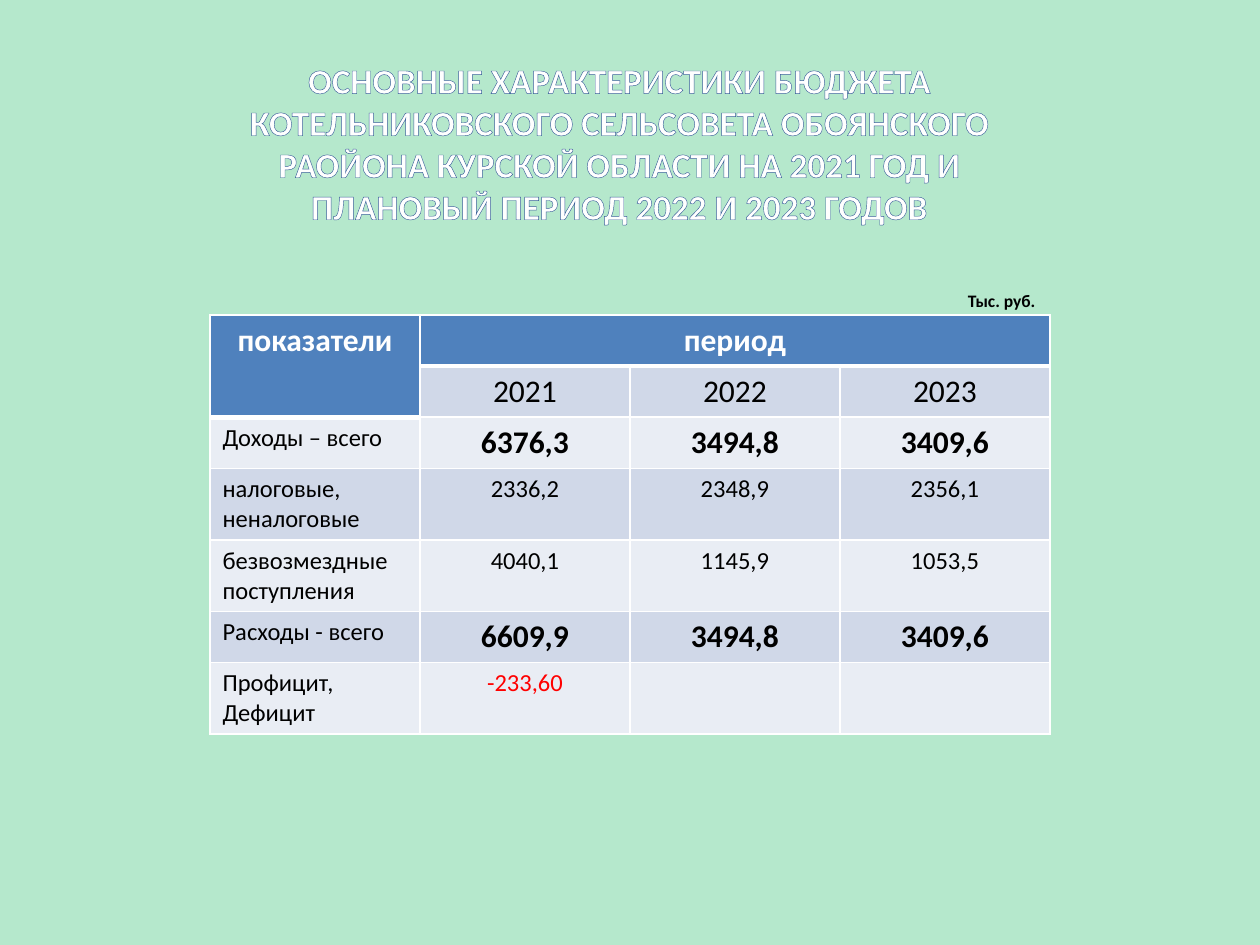
import pptx
import pptx.dml.color
import pptx.enum.text
import pptx.oxml
import pptx.oxml.ns
import pptx.util
from pptx.util import Pt

COLORS = {
    "background": "B5E8CC",
    "white": "FFFFFF",
    "black": "000000",
    "red": "FF0000",
    "outline": "3A5F9A",
    "header": "4F81BD",
    "dark band": "D0D8E8",
    "light band": "E9EDF4",
}
FONT = "Calibri"
CENTER = pptx.enum.text.PP_ALIGN.CENTER
LEFT = pptx.enum.text.PP_ALIGN.LEFT

TITLE = (
    "ОСНОВНЫЕ ХАРАКТЕРИСТИКИ БЮДЖЕТА КОТЕЛЬНИКОВСКОГО СЕЛЬСОВЕТА "
    "ОБОЯНСКОГО РАОЙОНА КУРСКОЙ ОБЛАСТИ НА 2021 ГОД И ПЛАНОВЫЙ ПЕРИОД "
    "2022 И 2023 ГОДОВ"
)
ROWS = [
    ["показатели", "период", "", ""],
    ["", "2021", "2022", "2023"],
    ["Доходы – всего", "6376,3", "3494,8", "3409,6"],
    ["налоговые, неналоговые", "2336,2", "2348,9", "2356,1"],
    ["безвозмездные поступления", "4040,1", "1145,9", "1053,5"],
    ["Расходы - всего", "6609,9", "3494,8", "3409,6"],
    ["Профицит,\nДефицит", "-233,60", "", ""],
]
TOTAL_ROWS = (2, 5)


def rgb(name):
    return pptx.dml.color.RGBColor.from_string(COLORS[name])


def write_text(frame, text, size=14, color="black", bold=False, align=LEFT):
    """Fill a text frame, one paragraph per line, and return its spans."""
    spans = []
    for index, line in enumerate(text.split("\n")):
        para = frame.add_paragraph() if index else frame.paragraphs[0]
        para.alignment = align
        span = para.add_run()
        span.text = line
        span.font.name = FONT
        span.font.size = Pt(size)
        span.font.bold = bold
        span.font.color.rgb = rgb(color)
        spans.append(span)
    return spans


def add_text_box(page, left, top, width, height, text, **text_format):
    box = page.shapes.add_textbox(Pt(left), Pt(top), Pt(width), Pt(height))
    box.text_frame.word_wrap = True
    box.text_frame.auto_size = pptx.enum.text.MSO_AUTO_SIZE.SHAPE_TO_FIT_TEXT
    return write_text(box.text_frame, text, **text_format)


def line_xml(tag, width, color):
    namespace = pptx.oxml.ns.nsdecls("a")
    return pptx.oxml.parse_xml(
        f'<a:{tag} {namespace} w="{Pt(width)}"><a:solidFill>'
        f'<a:srgbClr val="{COLORS[color]}"/></a:solidFill></a:{tag}>'
    )


def style_cell(cell, fill, bottom=1):
    """Set borders first: the schema wants them ahead of the fill."""
    properties = cell._tc.get_or_add_tcPr()
    for tag, width in (("lnL", 1), ("lnR", 1), ("lnT", 1), ("lnB", bottom)):
        properties.append(line_xml(tag, width, "white"))
    cell.fill.solid()
    cell.fill.fore_color.rgb = rgb(fill)


def text_format(row, column, text):
    if row == 0:
        return dict(size=18, color="white", bold=True, align=CENTER)
    if column == 0:
        return dict(size=14)
    total = row in TOTAL_ROWS
    return dict(
        size=18 if total or row == 1 else 14,
        bold=total,
        color="red" if text.startswith("-") else "black",
        align=CENTER,
    )


def add_budget_table(page, left, top, width, row_height):
    row_count, column_count = len(ROWS), len(ROWS[0])
    table = page.shapes.add_table(
        row_count, column_count,
        Pt(left), Pt(top), Pt(width), Pt(row_height * row_count),
    ).table
    for column in table.columns:
        column.width = Pt(width / column_count)

    # Header cells that span rows or columns
    table.cell(0, 0).merge(table.cell(1, 0))
    table.cell(0, 1).merge(table.cell(0, 3))

    for row, texts in enumerate(ROWS):
        table.rows[row].height = Pt(row_height)
        for column, text in enumerate(texts):
            cell = table.cell(row, column)
            header = row == 0 or (row == 1 and column == 0)
            band = "dark band" if row % 2 else "light band"
            style_cell(cell, "header" if header else band, 3 if header else 1)
            if text:
                write_text(cell.text_frame, text,
                           **text_format(row, column, text))


def main():
    deck = pptx.Presentation()
    deck.slide_width, deck.slide_height = Pt(720), Pt(540)
    page = deck.slides.add_slide(deck.slide_layouts[6])
    page.background.fill.solid()
    page.background.fill.fore_color.rgb = rgb("background")

    # Outlined title
    for span in add_text_box(page, 108, 30, 492, 104.4, TITLE, size=20,
                             color="white", bold=True, align=CENTER):
        span._r.get_or_add_rPr().insert(0, line_xml("ln", 2.48, "outline"))

    # Budget figures and their unit
    add_budget_table(page, 120, 180, 480, 29.2)
    add_text_box(page, 546, 162, 78, 19.4, "Тыс. руб.", size=10, bold=True)

    deck.save("out.pptx")


if __name__ == "__main__":
    main()
